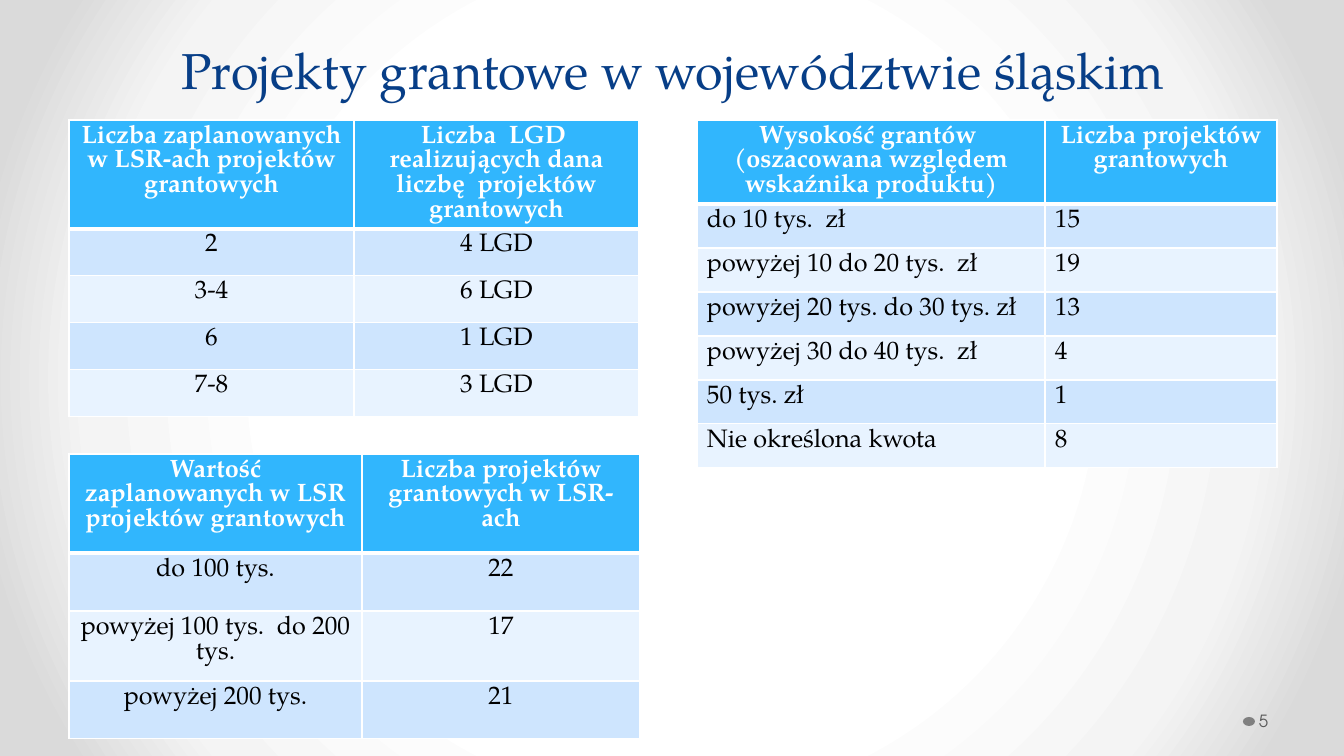
from pptx import Presentation
from pptx.dml.color import RGBColor
from pptx.enum.shapes import MSO_SHAPE
from pptx.enum.text import MSO_ANCHOR, PP_ALIGN
from pptx.oxml import parse_xml
from pptx.oxml.ns import nsdecls
from pptx.util import Pt

PX = 914400 / 100.8
SERIF, SANS = "TeX Gyre Pagella", "TeX Gyre Adventor"


def px(*lengths):
    return [round(n * PX) for n in lengths]


def add_run(p, text, size, font, color, bold=False):
    r = p.add_run()
    r.text = text
    r.font.size = Pt(size)
    r.font.name = font
    r.font.bold = bold
    r.font.color.rgb = RGBColor.from_string(color)


prs = Presentation()
prs.slide_width, prs.slide_height = px(1344, 756)
s = prs.slides.add_slide(prs.slide_layouts[5])

fill = s.background.fill
fill.gradient()
grad = s.background._cSld.bg.bgPr.find(".//{*}gradFill")
stops = "".join(
    f'<a:gs pos="{pos}000"><a:srgbClr val="{color}"/></a:gs>'
    for pos, color in [(50, "FFFFFF"), (76, "F4F4F4"), (92, "DADADA")]
)
grad.getparent().replace(grad, parse_xml(
    f'<a:gradFill {nsdecls("a")} rotWithShape="1"><a:gsLst>{stops}</a:gsLst>'
    '<a:path path="circle"><a:fillToRect l="50000" t="50000" r="50000" b="50000"/>'
    '</a:path></a:gradFill>'
))

dot = s.shapes.add_shape(MSO_SHAPE.OVAL, *px(1243, 717, 12, 9))
dot.shadow.inherit = False
dot.fill.solid()
dot.fill.fore_color.rgb = RGBColor.from_string("808080")
dot.line.fill.background()

title = s.shapes.title
title.left, title.top, title.width, title.height = px(93, 13, 1159, 92)
tf = title.text_frame
tf.word_wrap = True
tf.vertical_anchor = MSO_ANCHOR.BOTTOM
p = tf.paragraphs[0]
p.alignment = PP_ALIGN.CENTER
p.line_spacing = Pt(58)
add_run(p, "Projekty grantowe w województwie śląskim", 36, SERIF, "073E87")

CENTER, LEFT = PP_ALIGN.CENTER, PP_ALIGN.LEFT
tables = [
    (69, 120, [285, 285], [106, 47, 47, 47, 47], CENTER, 12, [
        ("Liczba zaplanowanych w LSR-ach projektów grantowych",
         "Liczba  LGD  realizujących dana liczbę  projektów grantowych"),
        ("2", "4 LGD"),
        ("3-4", "6 LGD"),
        ("6", "1 LGD"),
        ("7-8", "3 LGD"),
    ]),
    (69, 454, [293, 278], [99, 58, 70, 58], CENTER, 10, [
        ("Wartość zaplanowanych w LSR projektów grantowych",
         "Liczba projektów grantowych w LSR-ach"),
        ("do 100 tys.", "22"),
        ("powyżej 100 tys.  do 200 tys.", "17"),
        ("powyżej 200 tys.", "21"),
    ]),
    (697, 120, [348, 232], [75] + [44] * 6, LEFT, 10, [
        ("Wysokość grantów  (oszacowana względem wskaźnika produktu)",
         "Liczba projektów grantowych"),
        ("do 10 tys.  zł", "15"),
        ("powyżej 10 do 20 tys.  zł", "19"),
        ("powyżej 20 tys. do 30 tys. zł", "13"),
        ("powyżej 30 do 40 tys.  zł", "4"),
        ("50 tys. zł", "1"),
        ("Nie określona kwota", "8"),
    ]),
]

for left, top, widths, heights, align, inset, rows in tables:
    frame = s.shapes.add_table(
        len(rows), 2, *px(left, top, sum(widths), sum(heights)))
    table = frame.table
    for column, width in zip(table.columns, px(*widths)):
        column.width = width
    for i, (row, height) in enumerate(zip(table.rows, px(*heights))):
        row.height = height
        header = i == 0
        for cell, text in zip(row.cells, rows[i]):
            cell.margin_left, cell.margin_right = px(inset, inset)
            cell.margin_top, cell.margin_bottom = px(5, 5)
            cell.fill.solid()
            color = "31B6FD" if header else ("E8F3FF", "CEE5FE")[i % 2]
            cell.fill.fore_color.rgb = RGBColor.from_string(color)
            p = cell.text_frame.paragraphs[0]
            p.alignment = CENTER if header else align
            add_run(p, text, 18, SERIF, "FFFFFF" if header else "000000", header)
            thick = {"B": header, "T": i == 1}
            for n, side in enumerate("LRTB"):
                width = Pt(3 if thick.get(side) else 1)
                cell._tc.tcPr.insert(n, parse_xml(
                    f'<a:ln{side} {nsdecls("a")} w="{width}"><a:solidFill>'
                    f'<a:srgbClr val="FFFFFF"/></a:solidFill></a:ln{side}>'
                ))

number = s.shapes.add_textbox(*px(1256, 701, 83, 40))
tf = number.text_frame
tf.word_wrap = True
tf.vertical_anchor = MSO_ANCHOR.MIDDLE
tf.margin_left, tf.margin_top, tf.margin_right, tf.margin_bottom = px(3, 5, 5, 5)
add_run(tf.paragraphs[0], "5", 12, SANS, "595959")

prs.save("out.pptx")
